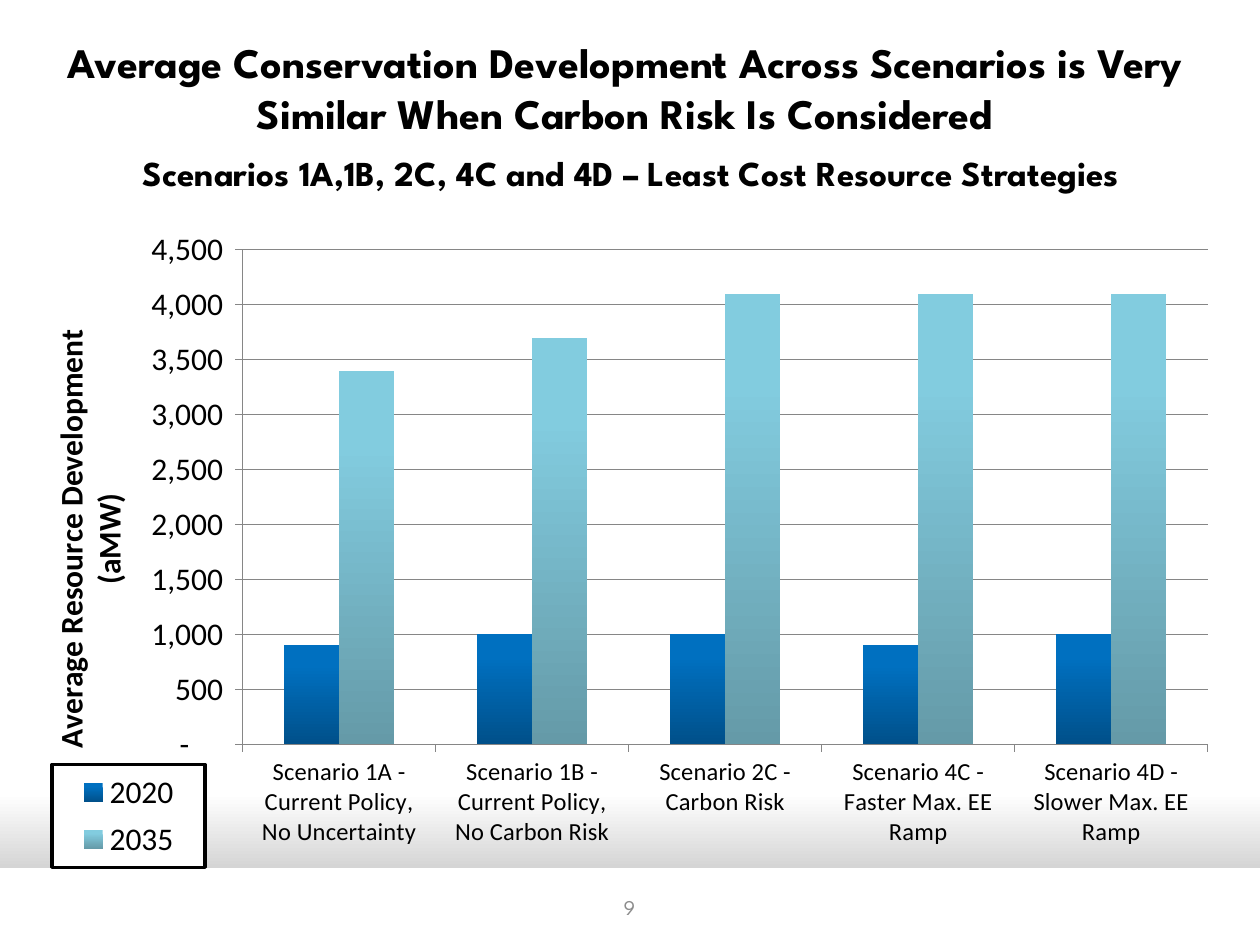
from lxml import etree
from pptx import Presentation
from pptx import util as u
from pptx.chart.data import CategoryChartData
from pptx.dml.color import RGBColor
from pptx.enum import chart as ch
from pptx.enum import shapes, text
from pptx.oxml import parse_xml
from pptx.oxml.ns import nsdecls, qn

COLORS = {
    "black": "000000", "white": "FFFFFF", "shade": "A6A6A6",
    "number": "8C8C8C", "grid": "868686",
    "2020": "0070C0", "2020 base": "00508A",
    "2035": "82CCDF", "2035 base": "659AA8",
}
HEADING = "League Spartan"
BODY = "Calibri"


def rgb(name):
    return RGBColor.from_string(COLORS[name])


def place(element, **fractions):
    for old in element.findall(qn("c:layout")):
        element.remove(old)
    layout = etree.Element(qn("c:layout"))
    manual = etree.SubElement(layout, qn("c:manualLayout"))
    settings = {"xMode": "edge", "yMode": "edge", **fractions}
    if "layoutTarget" in settings:
        settings = {"layoutTarget": settings.pop("layoutTarget"), **settings}
    for tag, value in settings.items():
        etree.SubElement(manual, qn(f"c:{tag}")).set("val", str(value))
    overlay = element.find(qn("c:overlay"))
    if overlay is None:
        element.insert(0, layout)
    else:
        overlay.addprevious(layout)


class Deck:
    def __init__(self, width, height):
        self.prs = Presentation()
        self.prs.slide_width = u.Inches(width)
        self.prs.slide_height = u.Inches(height)
        self.slide = self.prs.slides.add_slide(self.prs.slide_layouts[6])

    def gradient(self, fill, first, last, start):
        fill.gradient()
        fill.gradient_angle = 270
        for stop, name, position in zip(fill.gradient_stops, (first, last), (start, 1)):
            stop.color.rgb = rgb(name)
            stop.position = position

    def font(self, font, name, size=None, color="black", bold=False):
        font.name = name
        font.color.rgb = rgb(color)
        font.bold = bold
        if size:
            font.size = u.Pt(size)

    def grid_line(self, line):
        line.color.rgb = rgb("grid")
        line.width = u.Pt(0.7)

    def band(self, *box):
        band = self.slide.shapes.add_shape(
            shapes.MSO_SHAPE.RECTANGLE, *map(u.Inches, box))
        band.shadow.inherit = False
        band.fill.solid()
        band.fill.fore_color.rgb = rgb("white")
        band.line.fill.background()

    def label(self, box, lines, color="black", bold=False):
        frame = self.slide.shapes.add_textbox(*map(u.Inches, box)).text_frame
        frame.word_wrap = True
        frame.vertical_anchor = text.MSO_ANCHOR.MIDDLE
        paragraph = frame.paragraphs[0]
        paragraph.alignment = text.PP_ALIGN.CENTER
        one_size = lines[0][0][1] if len(lines) == 1 else None
        self.font(paragraph.font, HEADING, one_size, color, bold)
        for i, runs in enumerate(lines):
            if i:
                paragraph.add_line_break()
            for words, size in runs:
                run = paragraph.add_run()
                run.text = words
                if not one_size:
                    run.font.size = u.Pt(size)

    def axis(self, axis, size):
        self.grid_line(axis.format.line)
        axis.major_tick_mark = ch.XL_TICK_MARK.OUTSIDE
        axis.minor_tick_mark = ch.XL_TICK_MARK.NONE
        self.font(axis.tick_labels.font, BODY, size)

    def columns(self, box, scenarios, development, axis_title):
        data = CategoryChartData()
        data.categories = scenarios
        for year, values in development.items():
            data.add_series(year, values)
        chart = self.slide.shapes.add_chart(
            ch.XL_CHART_TYPE.COLUMN_CLUSTERED, *map(u.Inches, box), data).chart
        chart.has_title = False
        self.font(chart.font, BODY, 18)
        plot = chart.plots[0]
        plot.vary_by_categories = False
        plot.gap_width = 150
        plot.overlap = 0
        for series in plot.series:
            self.gradient(series.format.fill, series.name, f"{series.name} base", 0.2)

        self.axis(chart.category_axis, 14)
        value_axis = chart.value_axis
        self.axis(value_axis, 18)
        value_axis.minimum_scale = 0
        value_axis.maximum_scale = 4500
        value_axis.major_unit = 500
        self.grid_line(value_axis.major_gridlines.format.line)
        value_axis.tick_labels.number_format = '_(* #,##0_);_(* \\(#,##0\\);_(* "-"??_);_('
        value_axis.tick_labels.number_format_is_linked = False
        value_axis.has_title = True
        title = value_axis.axis_title
        title.text_frame.text = axis_title
        self.font(title.text_frame.paragraphs[0].font, BODY, 18, bold=True)
        body = title.text_frame._txBody.find(qn("a:bodyPr"))
        body.set("rot", "-5400000")
        body.set("vert", "horz")
        place(title._element, x=-0.003, y=0.159)

        self.legend(chart)
        place(chart._chartSpace.chart.plotArea,
              layoutTarget="inner", x=0.17, y=0.045, w=0.821, h=0.761)

    def legend(self, chart):
        chart.has_legend = True
        legend = chart.legend
        legend.position = ch.XL_LEGEND_POSITION.RIGHT
        legend.include_in_layout = False
        self.font(legend.font, BODY, 18)
        place(legend._element, x=0.008, y=0.837, w=0.13, h=0.158)
        legend._element.find(qn("c:overlay")).addnext(parse_xml(
            f'<c:spPr {nsdecls("c", "a")}>'
            f'<a:solidFill><a:srgbClr val="{COLORS["white"]}"/></a:solidFill>'
            f'<a:ln w="{u.Pt(2)}"><a:solidFill>'
            f'<a:srgbClr val="{COLORS["black"]}"/></a:solidFill></a:ln></c:spPr>'))


def main():
    deck = Deck(10, 7.5)
    deck.gradient(deck.slide.background.fill, "white", "shade", 0.84)
    deck.band(0, 6.89, 10, 0.61)
    deck.label(
        (0.25, 0.3, 9.42, 1.25),
        [[("Average Conservation Development Across Scenarios is Very "
           "Similar When Carbon Risk Is Considered", 24)],
         [(" ", 28),
          ("Scenarios 1A,1B, 2C, 4C and 4D – Least Cost Resource Strategies", 20)]],
        bold=True)
    deck.columns(
        (0.34, 1.75, 9.33, 5.16),
        ["Scenario 1A - Current Policy, No Uncertainty",
         "Scenario 1B - Current Policy, No Carbon Risk",
         "Scenario 2C - Carbon Risk",
         "Scenario 4C - Faster Max. EE Ramp",
         "Scenario 4D - Slower Max. EE Ramp"],
        {"2020": (900, 1000, 1000, 900, 1000),
         "2035": (3400, 3700, 4100, 4100, 4100)},
        "Average Resource Development (aMW)")
    deck.label((3.83, 7, 2.33, 0.4), [[("9", 12)]], color="number")
    deck.prs.save("out.pptx")


if __name__ == "__main__":
    main()
